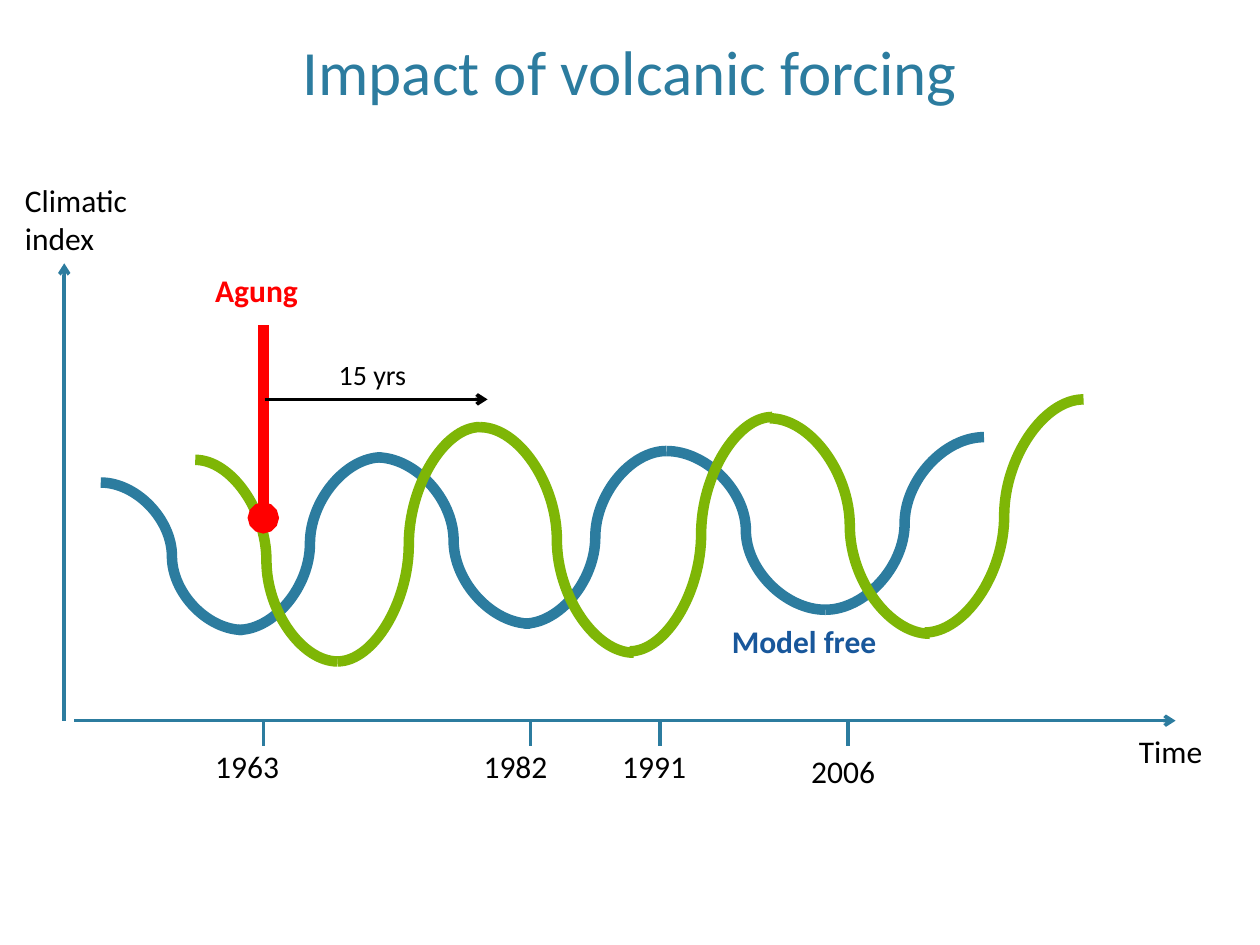
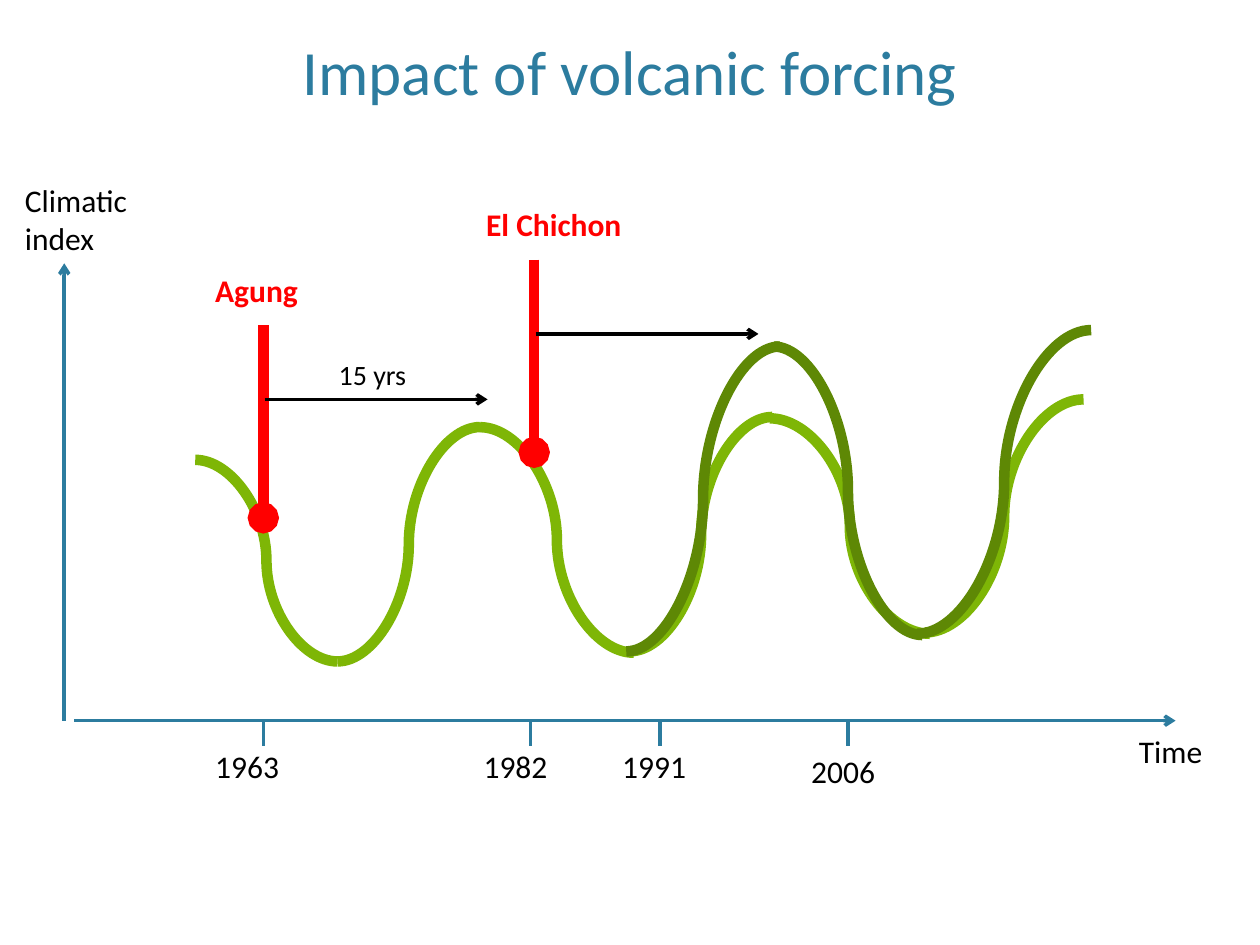
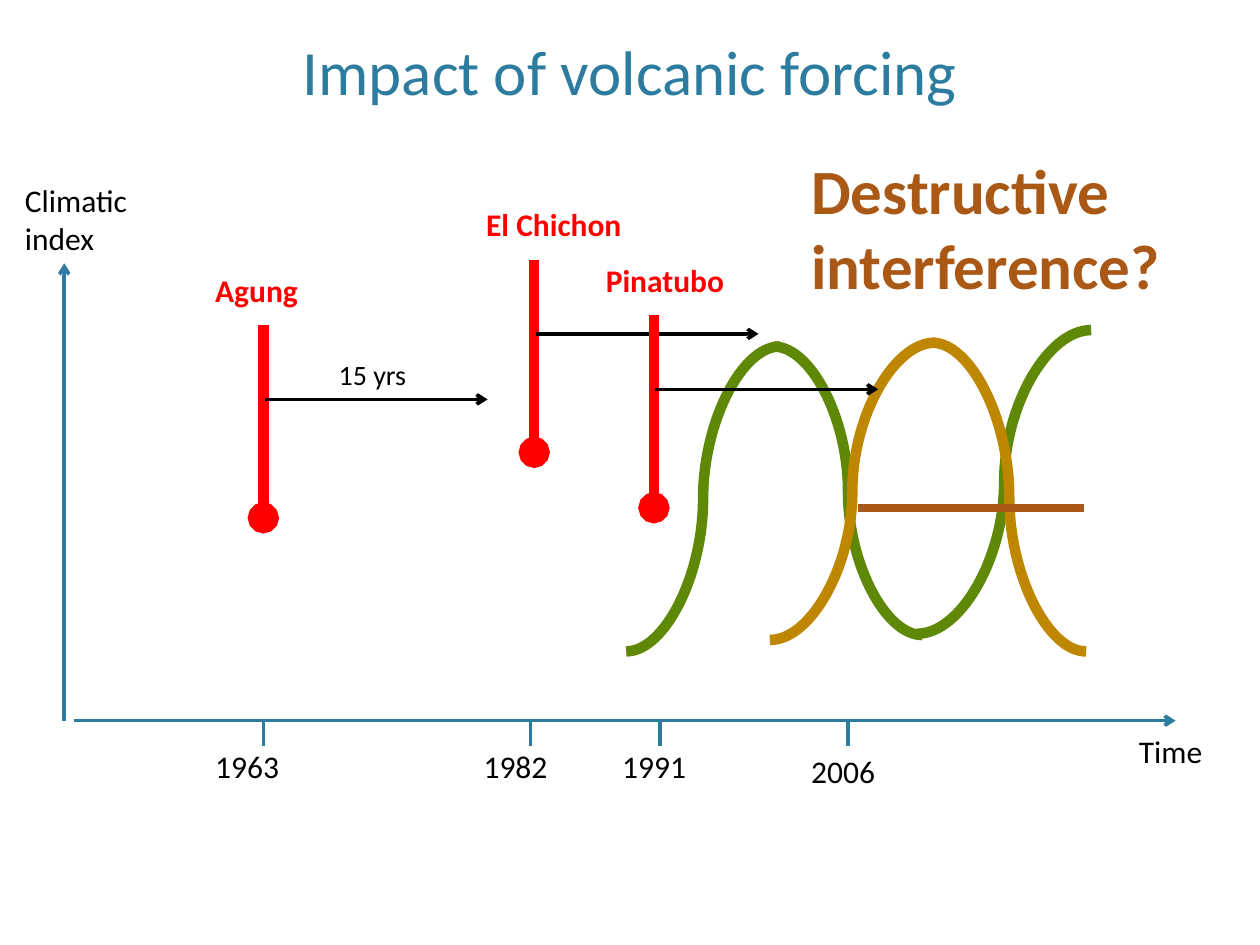
"""Builds three slides on how volcanic eruptions reset a climatic cycle."""
import pptx
import pptx.util
import pptx.dml.color
import pptx.enum.shapes
import pptx.enum.text
import pptx.oxml
import pptx.oxml.ns

Inches = pptx.util.Inches
KIND = pptx.enum.shapes.MSO_CONNECTOR

FONT = "Calibri"
TITLE = "Impact of volcanic forcing"
BLACK, WHITE, RED, TEAL = "000000", "FFFFFF", "FF0000", "2C7C9F"
NAVY, GREEN, MOSS, OCHRE, BROWN = "18579B", "7EB606", "5E8805", "BF8700", "AA5816"

AXIS_Y, TICK = 5.72, 0.2
YEARS = [("1963", 2.09, 1.61, 5.88), ("1982", 4.21, 3.74, 5.88),
         ("1991", 5.24, 4.84, 5.88), ("2006", 6.73, 6.34, 5.92)]

FREE_WAVE = (TEAL, [
    (0.8, 3.83, 1.93, 5), (1.89, 5, 3.03, 3.63), (2.99, 3.63, 4.21, 4.95),
    (4.16, 4.95, 5.29, 3.58), (5.29, 3.58, 6.55, 4.84), (6.55, 4.84, 7.81, 3.47)])
AGUNG_WAVE = (GREEN, [
    (1.55, 3.65, 2.68, 5.25), (2.68, 5.25, 3.81, 3.39), (3.81, 3.39, 5.03, 5.18),
    (5, 5.17, 6.13, 3.31), (6.11, 3.32, 7.38, 5.03), (7.34, 5.02, 8.6, 3.17)])
CHICHON_WAVE = (MOSS, [
    (4.97, 5.17, 6.19, 2.75), (6.14, 2.75, 7.32, 5.04), (7.28, 5.03, 8.66, 2.62)])
PINATUBO_WAVE = (OCHRE, [(6.11, 5.08, 7.42, 2.72), (7.4, 2.72, 8.62, 5.17)])

AGUNG = ("Agung", 2.09, 2.58, "15 yrs")
CHICHON = ("El Chichon", 4.24, 2.06, None)
PINATUBO = ("Pinatubo", 5.19, 2.5, None)

SLIDES = [
    {"waves": [FREE_WAVE, AGUNG_WAVE], "eruptions": [AGUNG],
     "label": "Model free"},
    {"waves": [AGUNG_WAVE, CHICHON_WAVE], "eruptions": [AGUNG, CHICHON]},
    {"waves": [CHICHON_WAVE, PINATUBO_WAVE], "eruptions": [AGUNG, CHICHON, PINATUBO],
     "conclusion": "Destructive interference?"},
]


def rgb(color):
    return pptx.dml.color.RGBColor.from_string(color)


def write(tf, text, size=18, color=BLACK, bold=False, align=None):
    tf.word_wrap = True
    p = tf.paragraphs[0]
    p.alignment = align
    r = p.add_run()
    r.text = text
    r.font.name, r.font.size, r.font.bold = FONT, pptx.util.Pt(size), bold
    r.font.color.rgb = rgb(color)


def add_text(shapes, text, x, y, w, h=0.4, **style):
    sp = shapes.add_textbox(Inches(x), Inches(y), Inches(w), Inches(h))
    write(sp.text_frame, text, **style)


def add_line(shapes, x1, y1, x2, y2, color=TEAL, width=2, end=None, kind=KIND.STRAIGHT):
    sp = shapes.add_connector(kind, Inches(x1), Inches(y1), Inches(x2), Inches(y2))
    sp.line.color.rgb = rgb(color)
    sp.line.width = pptx.util.Pt(width)
    props = sp._element.spPr
    if end:
        tail = pptx.oxml.parse_xml(
            f'<a:tailEnd {pptx.oxml.ns.nsdecls("a")} type="{end}"/>')
        props.get_or_add_ln().append(tail)
    effects = pptx.oxml.parse_xml(f'<a:effectLst {pptx.oxml.ns.nsdecls("a")}/>')
    props.append(effects)


def add_title(s):
    sp = s.shapes.title
    sp.left, sp.top, sp.width, sp.height = map(Inches, (0, -0.11, 10, 1.02))
    tf = sp.text_frame
    tf.auto_size = pptx.enum.text.MSO_AUTO_SIZE.NONE
    tf.vertical_anchor = pptx.enum.text.MSO_ANCHOR.BOTTOM
    write(tf, TITLE, size=36, color=TEAL, align=pptx.enum.text.PP_ALIGN.CENTER)


def add_axes(s):
    add_line(s.shapes, 0.51, AXIS_Y, 0.51, 2.09, end="arrow")
    add_line(s.shapes, 0.59, AXIS_Y, 9.33, AXIS_Y, end="arrow")
    add_text(s.shapes, "Climatic index", 0.1, 1.39, 1.57, 0.71)
    add_text(s.shapes, "Time", 8.94, 5.76, 1.06)
    for year, x, left, top in YEARS:
        add_line(s.shapes, x, AXIS_Y, x, AXIS_Y + TICK)
        add_text(s.shapes, year, left, top, 1.34)


def add_wave(s, color, arcs):
    group = s.shapes.add_group_shape()
    for arc in arcs:
        add_line(group.shapes, *arc, color=color, width=6, kind=KIND.CURVE)


def add_eruption(s, name, x, top, lag):
    shapes = s.shapes.add_group_shape().shapes
    lag_y = top + 0.59
    add_text(shapes, name, x - 0.48, top - 0.48, 1.73, color=RED, bold=True)
    add_line(shapes, x, top, x, top + 1.53, color=RED, width=6, end="oval")
    add_line(shapes, x + 0.01, lag_y, x + 1.78, lag_y, color=BLACK, end="arrow")
    if lag:
        add_text(shapes, lag, x + 0.5, lag_y - 0.38, 0.87, 0.37, size=16)


def add_conclusion(s, text):
    add_line(s.shapes, 6.81, 4.03, 8.6, 4.03, color=BROWN, width=4.5)
    sp = s.shapes.add_shape(pptx.enum.shapes.MSO_SHAPE.RECTANGLE,
                            Inches(6.34), Inches(1.15), Inches(3.66), Inches(1.31))
    sp.shadow.inherit = False
    sp.fill.solid()
    sp.fill.fore_color.rgb = rgb(WHITE)
    sp.line.fill.background()
    sp.text_frame.vertical_anchor = pptx.enum.text.MSO_ANCHOR.TOP
    write(sp.text_frame, text, size=36, color=BROWN, bold=True,
          align=pptx.enum.text.PP_ALIGN.LEFT)


def main():
    prs = pptx.Presentation()
    prs.slide_width, prs.slide_height = Inches(10), Inches(7.5)
    for content in SLIDES:
        s = prs.slides.add_slide(prs.slide_layouts[5])
        add_title(s)
        for color, arcs in content["waves"]:
            add_wave(s, color, arcs)
        add_axes(s)
        if "label" in content:
            add_text(s.shapes, content["label"], 5.71, 4.89, 2.1, color=NAVY, bold=True)
        if "conclusion" in content:
            add_conclusion(s, content["conclusion"])
        for eruption in content["eruptions"]:
            add_eruption(s, *eruption)
    prs.save("out.pptx")


if __name__ == "__main__":
    main()
